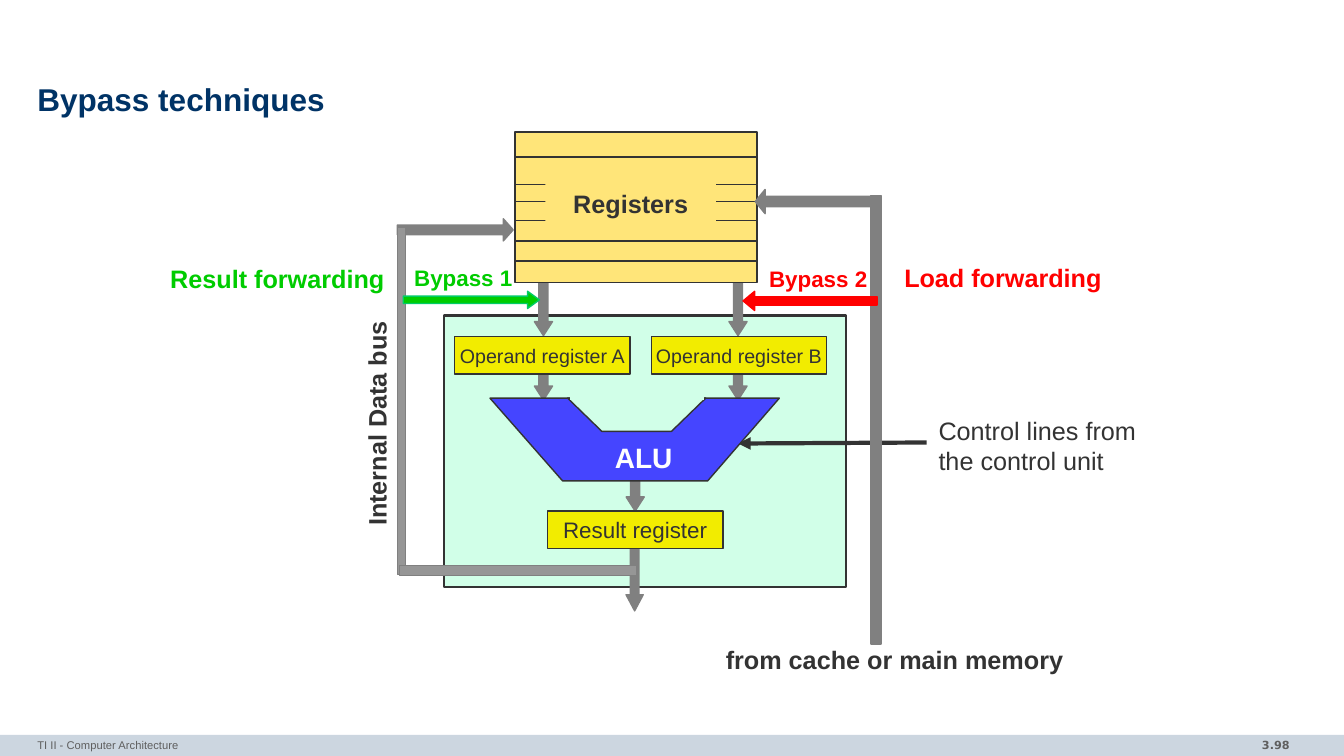
from dataclasses import dataclass
from typing import NamedTuple, Optional

from lxml import etree
from pptx import Presentation
from pptx import util as u
from pptx.dml.color import RGBColor
from pptx.enum import shapes as sh, text as tx
from pptx.oxml import ns


@dataclass(frozen=True)
class Theme:
    font: str = "Arial"
    num_font: str = "DejaVu Sans"
    ink: str = "333333"
    navy: str = "003366"
    dim: str = "5F5F5F"
    white: str = "FFFFFF"
    bar: str = "CCD6E0"
    mint: str = "D1FFE8"
    sand: str = "FFE579"
    yellow: str = "F2EC00"
    blue: str = "4545FF"
    grey: str = "808080"
    bus: str = "969696"
    green: str = "00CC00"
    edge: str = "00CC66"
    red: str = "FF0000"
    title: float = 22.5
    alu: float = 20
    label: float = 18
    mid: float = 16
    small: float = 14
    foot: float = 8


class Box(NamedTuple):
    x: float
    y: float
    w: float
    h: float


class Arrow(NamedTuple):
    kind: sh.MSO_SHAPE
    box: Box
    shaft: float
    head: float
    fill: str = "808080"
    line: str = "808080"


class Label(NamedTuple):
    text: str
    box: Box
    size: float
    color: str
    bold: bool = True
    wrap: bool = False
    turn: float = 0


T = Theme()
KIND = sh.MSO_SHAPE
LEFT, MID, RIGHT = tx.PP_ALIGN.LEFT, tx.PP_ALIGN.CENTER, tx.PP_ALIGN.RIGHT


def rgb(code: str) -> RGBColor:
    return RGBColor.from_string(code)


def paint(shape, fill: str, line: Optional[str], width: float = 1) -> None:
    shape.shadow.inherit = False
    shape.fill.solid()
    shape.fill.fore_color.rgb = rgb(fill)
    if line:
        shape.line.color.rgb = rgb(line)
        shape.line.width = u.Pt(width)
    else:
        shape.line.fill.background()


def draw(kind: sh.MSO_SHAPE, box: Box, fill: str, line: Optional[str] = None, width: float = 1):
    shape = slide.shapes.add_shape(kind, *map(u.Inches, box))
    paint(shape, fill, line, width)
    return shape


def arrow(item: Arrow) -> None:
    shape = draw(item.kind, item.box, item.fill, item.line)
    shape.adjustments[0], shape.adjustments[1] = item.shaft, item.head


def outline(points: list[tuple[float, float]], fill: str) -> None:
    dots = [(u.Inches(x), u.Inches(y)) for x, y in points]
    form = slide.shapes.build_freeform(*dots[0])
    form.add_line_segments(dots[1:], close=True)
    paint(form.convert_to_shape(), fill, T.ink)


def link(x1: float, y1: float, x2: float, y2: float, color: str, width: float, tip: bool = False) -> None:
    line = slide.shapes.add_connector(sh.MSO_CONNECTOR.STRAIGHT, *map(u.Inches, (x1, y1, x2, y2)))
    line.line.color.rgb = rgb(color)
    line.line.width = u.Pt(width)
    if tip:
        etree.SubElement(line.line._get_or_add_ln(), ns.qn("a:tailEnd"), type="triangle")
    etree.SubElement(line._element.spPr, ns.qn("a:effectLst"))


def write(shape, *parts: tuple[str, float], color: str, bold: bool = False, align=LEFT,
          font: str = T.font, wrap: bool = True, mid: bool = False, pad: Optional[tuple[float, float]] = None,
          lead: Optional[float] = None, tab: Optional[float] = None) -> None:
    frame = shape.text_frame
    frame.word_wrap = wrap
    frame.vertical_anchor = tx.MSO_ANCHOR.MIDDLE if mid else tx.MSO_ANCHOR.TOP
    if pad:
        frame.margin_left = frame.margin_right = u.Inches(pad[0])
        frame.margin_top = frame.margin_bottom = u.Inches(pad[1])
    para = frame.paragraphs[0]
    para.alignment = align
    if lead:
        para.line_spacing = lead
    if tab:
        stops = etree.SubElement(para._p.get_or_add_pPr(), ns.qn("a:tabLst"))
        etree.SubElement(stops, ns.qn("a:tab"), pos=str(u.Inches(tab)), algn="l")
    for words, size in parts:
        run = para.add_run()
        run.text = words
        run.font.name, run.font.size, run.font.bold = font, u.Pt(size), bold
        run.font.color.rgb = rgb(color)


def area(box: Box):
    return slide.shapes.add_textbox(*map(u.Inches, box))


def label(item: Label) -> None:
    shape = area(item.box)
    shape.rotation = item.turn
    write(shape, (item.text, item.size), color=item.color, bold=item.bold, wrap=item.wrap)


deck = Presentation()
deck.slide_width, deck.slide_height = u.Inches(13.33), u.Inches(7.5)
slide = deck.slides.add_slide(deck.slide_layouts[6])

# Title and footer
draw(KIND.RECTANGLE, Box(0, 7.29, 13.33, 0.21), T.bar)
write(area(Box(11.1, 7.28, 1.79, 0.23)), ("3.98", T.foot), color=T.dim, bold=True,
      align=RIGHT, font=T.num_font)
write(area(Box(0.37, 0.78, 12.6, 0.47)), ("Bypass techniques", T.title), color=T.navy,
      bold=True, mid=True, pad=(0, 0), lead=0.85)
write(area(Box(0.37, 7.28, 8.72, 0.22)), ("TI II - Computer Architecture", T.foot),
      color=T.dim, pad=(0, 0.05))

# Execution unit, control line and downward arrows
draw(KIND.RECTANGLE, Box(4.4, 3.13, 3.99, 2.69), T.mint, T.ink, 1.5)
link(9.19, 4.39, 7.32, 4.4, T.ink, 3, tip=True)
for top in (2.79, 3.43):
    for x in (5.3, 7.23):
        arrow(Arrow(KIND.DOWN_ARROW, Box(x, top, 0.18, 0.54), 0.5, 0.775))
arrow(Arrow(KIND.DOWN_ARROW, Box(6.21, 4.52, 0.18, 0.55), 0.5, 0.777))
arrow(Arrow(KIND.DOWN_ARROW, Box(6.21, 5.44, 0.17, 0.62), 0.5, 0.938))

# Register file
rows = (1.31, 1.56, 1.83, 2, 2.19, 2.39, 2.59, 2.8)
for top, end in zip(rows, rows[1:]):
    draw(KIND.RECTANGLE, Box(5.11, top, 2.4, end - top), T.sand, T.ink)
write(draw(KIND.RECTANGLE, Box(5.41, 1.82, 1.69, 0.4), T.sand), ("Registers", T.label),
      color=T.ink, bold=True, align=MID)

# Operand and result registers
for name, x, y, size in (("Operand register A", 4.51, 3.34, T.small),
                         ("Operand register B", 6.46, 3.34, T.small),
                         ("Result register", 5.43, 5.07, T.mid)):
    write(draw(KIND.RECTANGLE, Box(x, y, 1.74, 0.37), T.yellow, T.ink), (name, size),
          color=T.ink, align=MID, wrap=False, mid=True)

# ALU with its notch
outline([(4.86, 3.95), (5.58, 4.77), (7.02, 4.77), (7.73, 3.95)], T.blue)
outline([(5.63, 3.95), (5.97, 4.28), (6.66, 4.28), (7, 3.95)], T.mint)
link(5.65, 3.95, 6.98, 3.95, T.mint, 2.25)

# Buses and bypasses
arrow(Arrow(KIND.RIGHT_ARROW, Box(3.94, 2.17, 1.15, 0.22), 0.433, 0.447))
for box, fill in ((Box(3.94, 2.26, 0.08, 3.44), T.bus),
                  (Box(3.96, 5.61, 2.36, 0.1), T.bus),
                  (Box(8.64, 1.94, 0.1, 4.45), T.grey)):
    draw(KIND.RECTANGLE, box, fill, T.grey)
for item in (
    Arrow(KIND.RIGHT_ARROW, Box(4, 2.89, 1.35, 0.17), 0.433, 0.688, T.green, T.edge),
    Arrow(KIND.LEFT_ARROW, Box(7.49, 1.88, 1.15, 0.24), 0.433, 0.409),
    Arrow(KIND.LEFT_ARROW, Box(7.37, 2.89, 1.33, 0.19), 0.433, 0.603, T.red, T.red),
):
    arrow(item)

# Labels
for item in (
    Label("ALU", Box(6, 4.32, 1.21, 0.43), T.alu, T.white, wrap=True),
    Label("Internal Data bus", Box(2.62, 4, 2.23, 0.4), T.label, T.ink, turn=270),
    Label("Control lines from the control unit", Box(9.21, 4.07, 2.18, 0.7), T.label, T.ink,
          bold=False, wrap=True),
    Label("Bypass 1", Box(4.01, 2.57, 1.18, 0.37), T.mid, T.green),
    Label("Result forwarding", Box(1.59, 2.56, 2.33, 0.4), T.label, T.green),
    Label("from cache or main memory", Box(7.1, 6.34, 3.55, 0.4), T.label, T.ink),
):
    label(item)
write(area(Box(7.53, 2.55, 3.51, 0.4)), ("Bypass 2\t", T.mid), ("Load forwarding", T.label),
      color=T.red, bold=True, wrap=False, tab=1.34)

deck.save("out.pptx")
